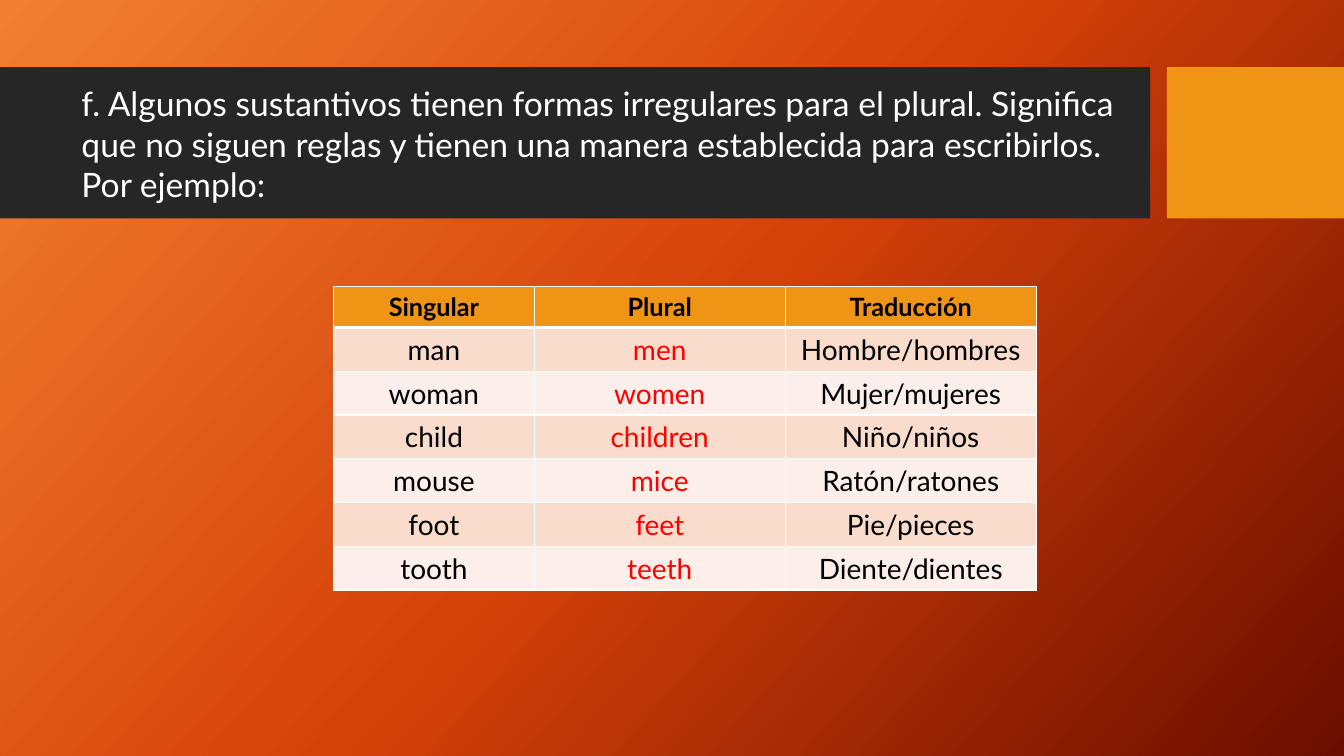
from copy import deepcopy

from lxml import etree
from pptx import Presentation
from pptx.dml.color import RGBColor
from pptx.enum import shapes, text
from pptx.oxml.ns import qn
from pptx.util import Pt

TITLE = ("f. Algunos sustantivos tienen formas irregulares para el plural. "
         "Significa que no siguen reglas y tienen una manera establecida "
         "para escribirlos. Por ejemplo:")
ROWS = [
    ("Singular", "Plural", "Traducción"),
    ("man", "men", "Hombre/hombres"),
    ("woman", "women", "Mujer/mujeres"),
    ("child", "children", "Niño/niños"),
    ("mouse", "mice", "Ratón/ratones"),
    ("foot", "feet", "Pie/pieces"),
    ("tooth", "teeth", "Diente/dientes"),
]
HEX = {
    "light": "F18031", "mid": "D54209", "deep": "6A0D00",
    "band": "262626", "gold": "F09415", "odd": "F9DCCC", "even": "FCEEE8",
    "white": "FFFFFF", "black": "000000", "red": "FF0000",
}
FONT = "Lato"
WIDE, HIGH = 960, 540
BARS = [(0, 821.5, "band"), (833.5, 126.5, "gold")]
BAR_TOP, BAR_HIGH = 48, 108
COLS = (143.3, 179.3, 179.3)
HEAD_HIGH, ROW_HIGH = 29.2, 31.2


def rgb(name):
    return RGBColor.from_string(HEX[name])


def style(par, size, color, bold=False):
    for run in par.runs:
        font = run.font
        font.name, font.size, font.bold = FONT, Pt(size), bold
        font.color.rgb = rgb(color)


def paint(slide):
    """Fill the background with a three-stop diagonal gradient."""
    fill = slide.background.fill
    fill.gradient()
    fill.gradient_angle = 318
    first = fill._fill._gradFill.find(qn("a:gsLst"))[0]
    first.addnext(deepcopy(first))
    for stop, name, pos in zip(fill.gradient_stops, ("light", "mid", "deep"), (0, 0.5, 1)):
        stop.color.rgb = rgb(name)
        stop.position = pos


def edge(cell, side, width):
    line = etree.SubElement(cell._tc.get_or_add_tcPr(), qn("a:ln" + side), w=str(Pt(width)))
    solid = etree.SubElement(line, qn("a:solidFill"))
    etree.SubElement(solid, qn("a:srgbClr"), val=HEX["white"])


def add_bars(slide):
    for left, width, color in BARS:
        bar = slide.shapes.add_shape(shapes.MSO_SHAPE.RECTANGLE, Pt(left), Pt(BAR_TOP),
                                     Pt(width), Pt(BAR_HIGH))
        bar.shadow.inherit = False
        bar.fill.solid()
        bar.fill.fore_color.rgb = rgb(color)
        bar.line.fill.background()


def add_title(slide):
    box = slide.shapes.add_textbox(Pt(51.1), Pt(55.4), Pt(764), Pt(94.3))
    frame = box.text_frame
    frame.word_wrap = True
    frame.vertical_anchor = text.MSO_ANCHOR.MIDDLE
    frame.text = TITLE
    style(frame.paragraphs[0], 24, "white")


def add_nouns(slide):
    high = HEAD_HIGH + ROW_HIGH * (len(ROWS) - 1)
    table = slide.shapes.add_table(len(ROWS), len(COLS), Pt(238.3), Pt(204.8),
                                   Pt(sum(COLS)), Pt(high)).table
    for col, width in zip(table.columns, COLS):
        col.width = Pt(width)
    for r, words in enumerate(ROWS):
        head = r == 0
        table.rows[r].height = Pt(HEAD_HIGH if head else ROW_HIGH)
        shade = "gold" if head else "odd" if r % 2 else "even"
        for c, word in enumerate(words):
            cell = table.cell(r, c)
            for side in "LRTB":
                thick = (r, side) in ((0, "B"), (1, "T"))
                edge(cell, side, 3 if thick else 1)
            cell.fill.solid()
            cell.fill.fore_color.rgb = rgb(shade)
            par = cell.text_frame.paragraphs[0]
            par.text = word
            par.alignment = text.PP_ALIGN.CENTER
            color = "red" if c == 1 and not head else "black"
            style(par, 18 if head else 20, color, head)


def main():
    deck = Presentation()
    deck.slide_width, deck.slide_height = Pt(WIDE), Pt(HIGH)
    slide = deck.slides.add_slide(deck.slide_layouts[6])
    paint(slide)
    add_bars(slide)
    add_title(slide)
    add_nouns(slide)
    deck.save("out.pptx")


if __name__ == "__main__":
    main()
